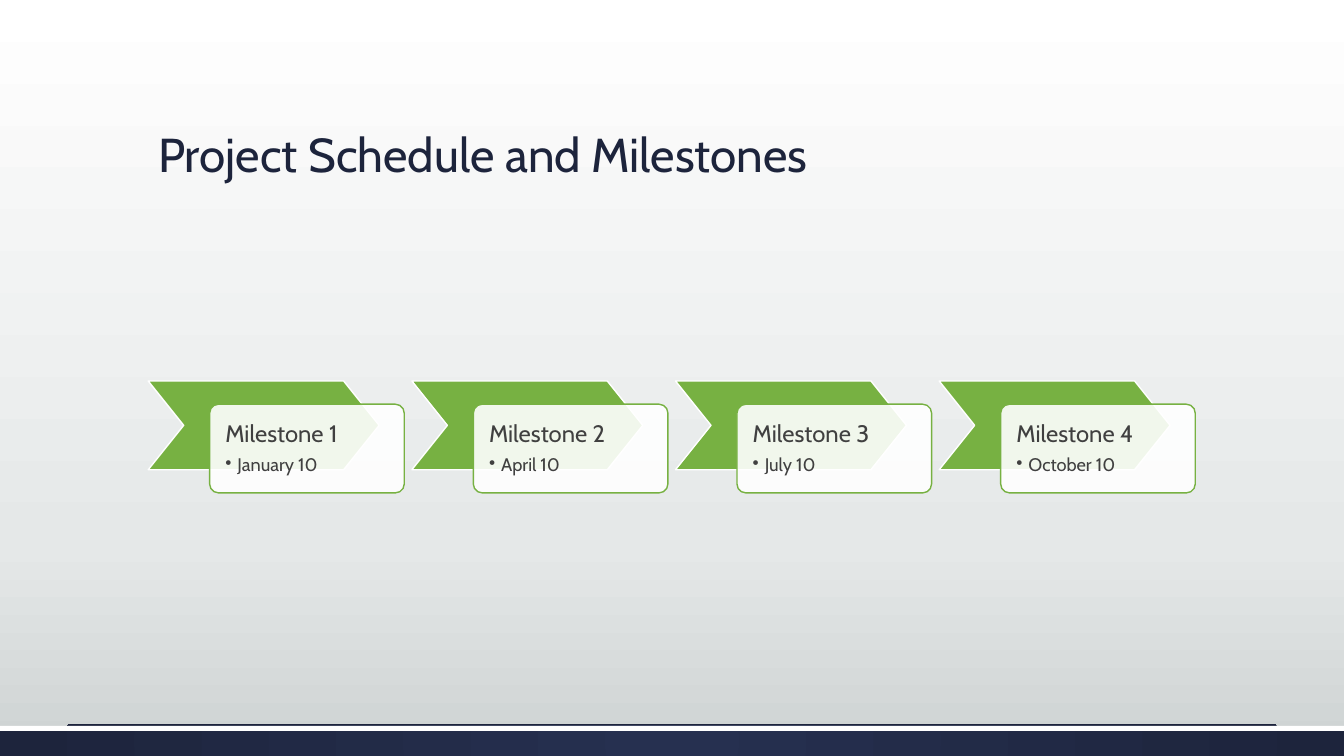
from lxml import etree
from pptx import Presentation
from pptx.dml.color import RGBColor
from pptx.enum.shapes import MSO_CONNECTOR as LINE, MSO_SHAPE as SHAPE
from pptx.enum.text import MSO_ANCHOR as ANCHOR, PP_ALIGN as ALIGN
from pptx.oxml.ns import qn
from pptx.util import Inches, Pt

WHITE = RGBColor(0xFF, 0xFF, 0xFF)
MIST = RGBColor(0xE5, 0xE8, 0xE8)
SILVER = RGBColor(0xCD, 0xD2, 0xD2)
NAVY = RGBColor(0x1D, 0x24, 0x3C)
INDIGO = RGBColor(0x26, 0x30, 0x50)
GREEN = RGBColor(0x77, 0xB1, 0x42)
GREY = RGBColor(0x40, 0x40, 0x40)
FONT = "Cabin"
WIDTH, HEIGHT = 13.33, 7.5
MILESTONES = [
    ("Milestone 1", "January 10"),
    ("Milestone 2", "April 10"),
    ("Milestone 3", "July 10"),
    ("Milestone 4", "October 10"),
]


def set_gradient(fill, element, stops, radial=False):
    """Fill with a gradient of (percent, colour) stops, top down or from the centre."""
    fill.gradient()
    gradient = next(element.iter(qn("a:gradFill")))
    for child in list(gradient):
        gradient.remove(child)
    stop_list = etree.SubElement(gradient, qn("a:gsLst"))
    for percent, color in stops:
        stop = etree.SubElement(stop_list, qn("a:gs"), pos=str(percent * 1000))
        etree.SubElement(stop, qn("a:srgbClr"), val=str(color))
    if radial:
        shade = etree.SubElement(gradient, qn("a:path"), path="circle")
        etree.SubElement(shade, qn("a:fillToRect"), {side: "50000" for side in "ltrb"})
    else:
        etree.SubElement(gradient, qn("a:lin"), ang="5400000", scaled="0")


def add_shape(slide, kind, box, color, line=None):
    """Add a flat preset shape in box, with an optional one-point outline."""
    shape = slide.shapes.add_shape(kind, *map(Inches, box))
    shape.shadow.inherit = False
    shape.fill.solid()
    shape.fill.fore_color.rgb = color
    if line is None:
        shape.line.fill.background()
    else:
        shape.line.color.rgb = line
        shape.line.width = Pt(1)
    return shape


def write(para, text, size, color):
    """Put left-aligned text in a paragraph."""
    para.text = text
    para.alignment = ALIGN.LEFT
    para.line_spacing = 0.9
    para.font.name = FONT
    para.font.size = Pt(size)
    para.font.color.rgb = color


def add_footer(slide, box):
    """Draw the navy band with its white edge and the hairline above it."""
    left, top, width, height = box
    band = add_shape(slide, SHAPE.RECTANGLE, box, NAVY)
    set_gradient(band.fill, band.element, [(0, INDIGO), (100, NAVY)], radial=True)
    add_shape(slide, SHAPE.RECTANGLE, (left, top, width, 0.05), WHITE)
    margin, line_top = 0.67, top - 0.01
    ends = (left + margin, line_top, left + width - margin, line_top)
    hairline = slide.shapes.add_connector(LINE.STRAIGHT, *map(Inches, ends))
    hairline.line.color.rgb = NAVY
    hairline.line.width = Pt(0.5)
    etree.SubElement(hairline.element.spPr, qn("a:effectLst"))


def add_title(slide, box, text):
    """Write the slide title at the bottom of box."""
    frame = slide.shapes.add_textbox(*map(Inches, box)).text_frame
    frame.word_wrap = True
    frame.vertical_anchor = ANCHOR.BOTTOM
    write(frame.paragraphs[0], text, 34, NAVY)


def add_milestone(slide, box, name, date):
    """Draw a chevron with a translucent card that overlaps its lower right."""
    left, top, width, height = box
    chevron = add_shape(slide, SHAPE.CHEVRON, box, GREEN, WHITE)
    chevron.adjustments[0] = 0.4
    card_box = (left + 0.61, top + 0.23, 1.93, height)
    card = add_shape(slide, SHAPE.ROUNDED_RECTANGLE, card_box, WHITE, GREEN)
    card.adjustments[0] = 0.1
    white = next(card.element.spPr.find(qn("a:solidFill")).iter(qn("a:srgbClr")))
    etree.SubElement(white, qn("a:alpha"), val="90000")

    frame = card.text_frame
    frame.word_wrap = True
    frame.vertical_anchor = ANCHOR.TOP
    frame.margin_left = frame.margin_right = Inches(0.13)
    frame.margin_top = frame.margin_bottom = Inches(0.15)
    heading = frame.paragraphs[0]
    write(heading, name, 17, GREY)
    heading.space_after = Pt(6)
    bullet = frame.add_paragraph()
    write(bullet, date, 13, GREY)
    properties = bullet._p.get_or_add_pPr()
    properties.set("marL", str(Inches(0.12)))
    properties.set("indent", str(-Inches(0.12)))
    etree.SubElement(properties, qn("a:buChar"), char="•")
    default_font = properties.find(qn("a:defRPr"))
    if default_font is not None:
        properties.append(default_font)


def add_timeline(slide, box, milestones):
    """Space the milestones evenly across box."""
    left, top, width, height = box
    step = width / len(milestones)
    for index, (name, date) in enumerate(milestones):
        place = (left + index * step, top, 2.29, height)
        add_milestone(slide, place, name, date)


def build_schedule(deck):
    """Add the project schedule slide."""
    slide = deck.slides.add_slide(deck.slide_layouts[6])
    backdrop = [(0, WHITE), (72, MIST), (100, SILVER)]
    set_gradient(slide.background.fill, slide.element, backdrop)
    add_footer(slide, (0, 7.2, WIDTH, 0.3))
    add_title(slide, (1.47, 0.51, 10.4, 1.35), "Project Schedule and Milestones")
    add_timeline(slide, (1.47, 3.78, 10.46, 0.88), MILESTONES)


def main():
    """Build and save the deck."""
    deck = Presentation()
    deck.slide_width = Inches(WIDTH)
    deck.slide_height = Inches(HEIGHT)
    build_schedule(deck)
    deck.save("out.pptx")


if __name__ == "__main__":
    main()
